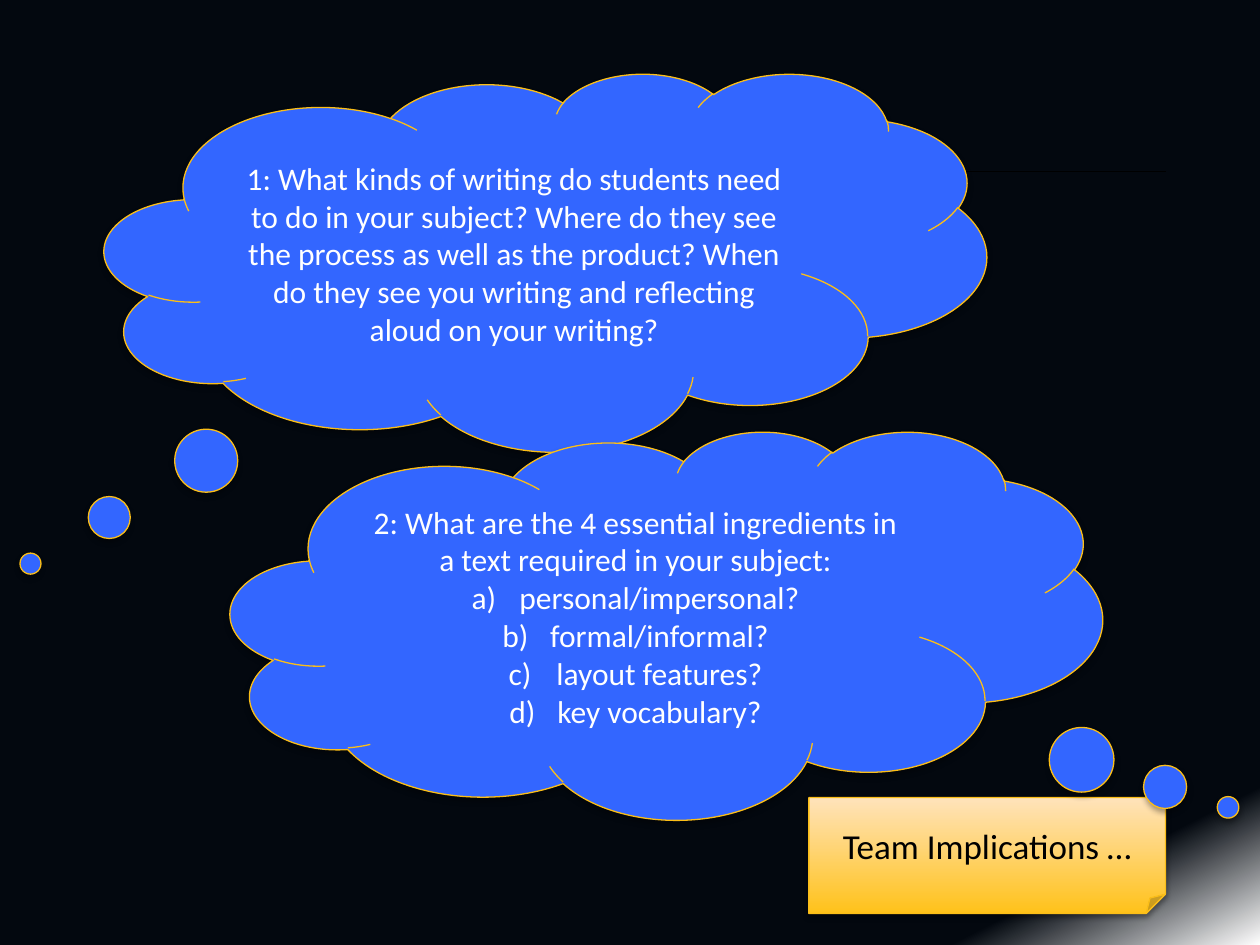
from lxml.etree import SubElement
from pptx import Presentation
from pptx.dml.color import RGBColor
from pptx.enum.shapes import MSO_CONNECTOR, MSO_SHAPE
from pptx.enum.text import MSO_ANCHOR, PP_ALIGN
from pptx.oxml.ns import qn
from pptx.util import Inches, Pt

COLORS = {
    "night": "03080F", "white": "FFFFFF", "black": "000000", "blue": "3366FF",
    "gold": "FBBE18", "amber": "FFC21A", "cream": "FFE3BB",
}
RULE = (1.83, 1.36, 9.25, 1.36)
WRITING = {
    "place": (0.83, 0.58, 7, 3),
    "tail": (-0.584, 0.798),
    "question": "1: What kinds of writing do students need to do in your subject? "
                "Where do they see the process as well as the product? "
                "When do they see you writing and reflecting aloud on your writing?",
    "options": [],
}
INGREDIENTS = {
    "place": (1.83, 3.42, 6.92, 3.08),
    "tail": (0.644, 0.47),
    "question": "2: What are the 4 essential ingredients in a text required in your subject:",
    "options": ["personal/impersonal?", "formal/informal?", "layout features?", "key vocabulary?"],
}
NOTE = {"place": (6.42, 6.33, 2.83, 0.92), "text": "Team Implications …"}


def color(name):
    return RGBColor.from_string(COLORS[name])


def set_gradient(fill, stops, angle):
    fill.gradient()
    fill.gradient_angle = angle
    for stop, (position, name) in zip(fill.gradient_stops, stops):
        stop.position = position
        stop.color.rgb = color(name)


def add_shadow(shape):
    shape.shadow.inherit = False
    effects = shape._element.spPr.find(qn("a:effectLst"))
    shadow = SubElement(effects, qn("a:outerShdw"), blurRad=str(Pt(3.1)), dist=str(Pt(1.8)),
                        dir="5400000", rotWithShape="0")
    tint = SubElement(shadow, qn("a:srgbClr"), val=COLORS["black"])
    SubElement(tint, qn("a:alpha"), val="35000")


def add_panel(page, kind, place):
    panel = page.shapes.add_shape(kind, *map(Inches, place))
    panel.line.color.rgb = color("gold")
    panel.line.width = Pt(0.75)
    add_shadow(panel)
    panel.text_frame.word_wrap = True
    panel.text_frame.vertical_anchor = MSO_ANCHOR.MIDDLE
    return panel


def write(para, text, size, name):
    para.text = text
    para.alignment = PP_ALIGN.CENTER
    para.font.name = "Calibri"
    para.font.size = Pt(size)
    para.font.color.rgb = color(name)


def add_letter(para):
    properties = para._p.get_or_add_pPr()
    properties.set("marL", str(Inches(0.38)))
    properties.set("indent", str(-Inches(0.38)))
    numbering = properties.makeelement(qn("a:buAutoNum"), {"type": "alphaLcParenR"})
    properties.insert(0, numbering)


def add_cloud(page, content):
    cloud = add_panel(page, MSO_SHAPE.CLOUD_CALLOUT, content["place"])
    cloud.fill.solid()
    cloud.fill.fore_color.rgb = color("blue")
    for index, value in enumerate(content["tail"]):
        cloud.adjustments[index] = value
    frame = cloud.text_frame
    write(frame.paragraphs[0], content["question"], 18, "white")
    for option in content["options"]:
        para = frame.add_paragraph()
        write(para, option, 18, "white")
        add_letter(para)


def add_note(page):
    note = add_panel(page, MSO_SHAPE.FOLDED_CORNER, NOTE["place"])
    set_gradient(note.fill, [(0, "amber"), (1, "cream")], 90)
    write(note.text_frame.paragraphs[0], NOTE["text"], 20, "black")


def add_rule(page):
    rule = page.shapes.add_connector(MSO_CONNECTOR.STRAIGHT, *map(Inches, RULE))
    rule.line.color.rgb = color("black")
    rule.line.width = Pt(0.75)
    SubElement(rule._element.spPr, qn("a:effectLst"))


def main():
    deck = Presentation()
    deck.slide_width, deck.slide_height = Inches(10), Inches(7.5)
    page = deck.slides.add_slide(deck.slide_layouts[6])
    set_gradient(page.background.fill, [(0.9, "night"), (1, "white")], 297)
    add_rule(page)
    add_cloud(page, WRITING)
    add_note(page)
    add_cloud(page, INGREDIENTS)
    deck.save("out.pptx")


if __name__ == "__main__":
    main()
